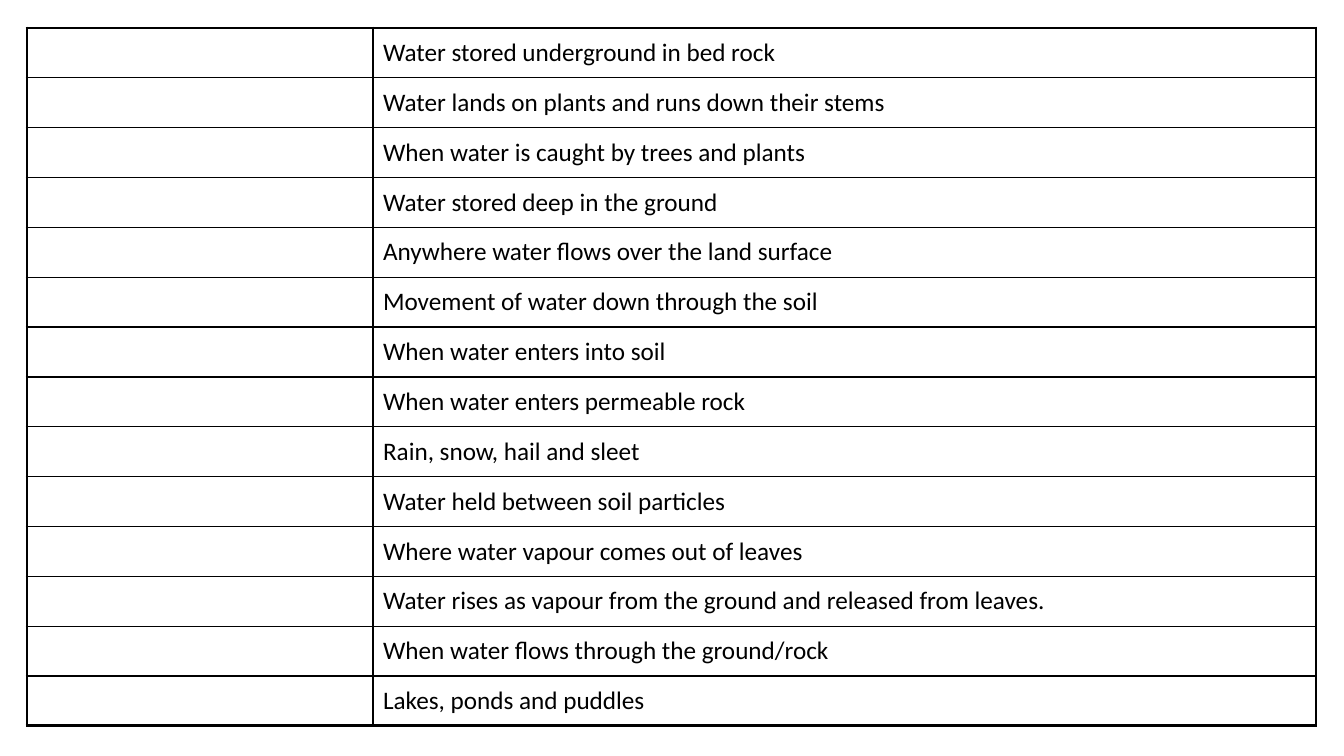
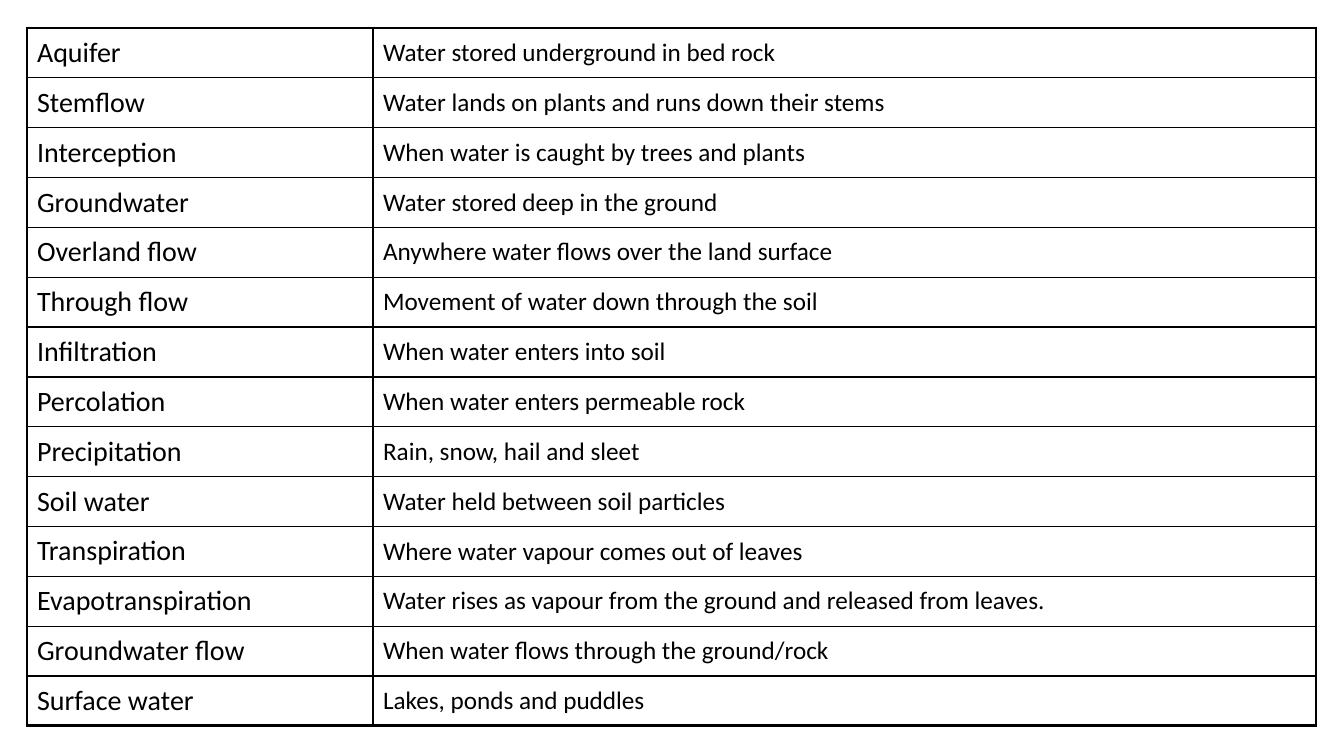
from lxml.etree import SubElement
from pptx import Presentation
from pptx.dml.color import RGBColor
from pptx.enum.text import MSO_ANCHOR
from pptx.oxml.ns import qn
from pptx.util import Pt

EMU_PER_PX = 914400 / 100.8
COLORS = {"ink": "000000", "paper": "FFFFFF"}
FONT = "Calibri"
TERM_SIZE, MEANING_SIZE = 20, 18
OUTER, INNER = 2.25, 1

LEFT, TOP, HEIGHT = 27, 28, 698
COL_WIDTHS = (346, 943)

GLOSSARY = [
    ("Aquifer", "Water stored underground in bed rock"),
    ("Stemflow", "Water lands on plants and runs down their stems"),
    ("Interception", "When water is caught by trees and plants"),
    ("Groundwater", "Water stored deep in the ground"),
    ("Overland flow", "Anywhere water flows over the land surface"),
    ("Through flow", "Movement of water down through the soil"),
    ("Infiltration", "When water enters into soil"),
    ("Percolation", "When water enters permeable rock"),
    ("Precipitation", "Rain, snow, hail and sleet"),
    ("Soil water", "Water held between soil particles"),
    ("Transpiration", "Where water vapour comes out of leaves"),
    ("Evapotranspiration", "Water rises as vapour from the ground and released from leaves."),
    ("Groundwater flow", "When water flows through the ground/rock"),
    ("Surface water", "Lakes, ponds and puddles"),
]


def px(n):
    return round(n * EMU_PER_PX)


def rgb(name):
    return RGBColor.from_string(COLORS[name])


def set_borders(cell, widths):
    """Draw the cell's edges; widths maps L, R, T, B (in that order) to points."""
    tc_pr = cell._tc.get_or_add_tcPr()
    for side, width in widths.items():
        ln = SubElement(tc_pr, qn(f"a:ln{side}"), w=str(Pt(width)))
        fill = SubElement(ln, qn("a:solidFill"))
        SubElement(fill, qn("a:srgbClr"), val=COLORS["ink"])


def write_cell(cell, text, size):
    cell.vertical_anchor = MSO_ANCHOR.MIDDLE
    p = cell.text_frame.paragraphs[0]
    if text:
        p.add_run().text = text
    font = p.runs[0].font if text else p.font
    for name, value in {"name": FONT, "size": Pt(size)}.items():
        setattr(font, name, value)
    font.color.rgb = rgb("ink")


def add_glossary(s, show_terms):
    """Add the two-column table, leaving the terms blank for the exercise."""
    last_row, last_col = len(GLOSSARY) - 1, len(COL_WIDTHS) - 1
    table = s.shapes.add_table(len(GLOSSARY), len(COL_WIDTHS), px(LEFT), px(TOP),
                               px(sum(COL_WIDTHS)), px(HEIGHT)).table
    table.first_row = table.horz_banding = False
    for column, width in zip(table.columns, COL_WIDTHS):
        column.width = px(width)
    for i, (term, meaning) in enumerate(GLOSSARY):
        table.rows[i].height = px(HEIGHT / len(GLOSSARY))
        entries = [(term if show_terms else "", TERM_SIZE), (meaning, MEANING_SIZE)]
        for j, (text, size) in enumerate(entries):
            cell = table.cell(i, j)
            at_edge = {"L": j == 0, "R": j == last_col, "T": i == 0, "B": i == last_row}
            set_borders(cell, {side: OUTER if edge else INNER
                               for side, edge in at_edge.items()})
            cell.fill.solid()
            cell.fill.fore_color.rgb = rgb("paper")
            write_cell(cell, text, size)


def main():
    prs = Presentation()
    prs.slide_width, prs.slide_height = px(1344), px(756)
    blank = prs.slide_layouts[6]
    for show_terms in (False, True):
        add_glossary(prs.slides.add_slide(blank), show_terms)
    prs.save("out.pptx")


if __name__ == "__main__":
    main()
